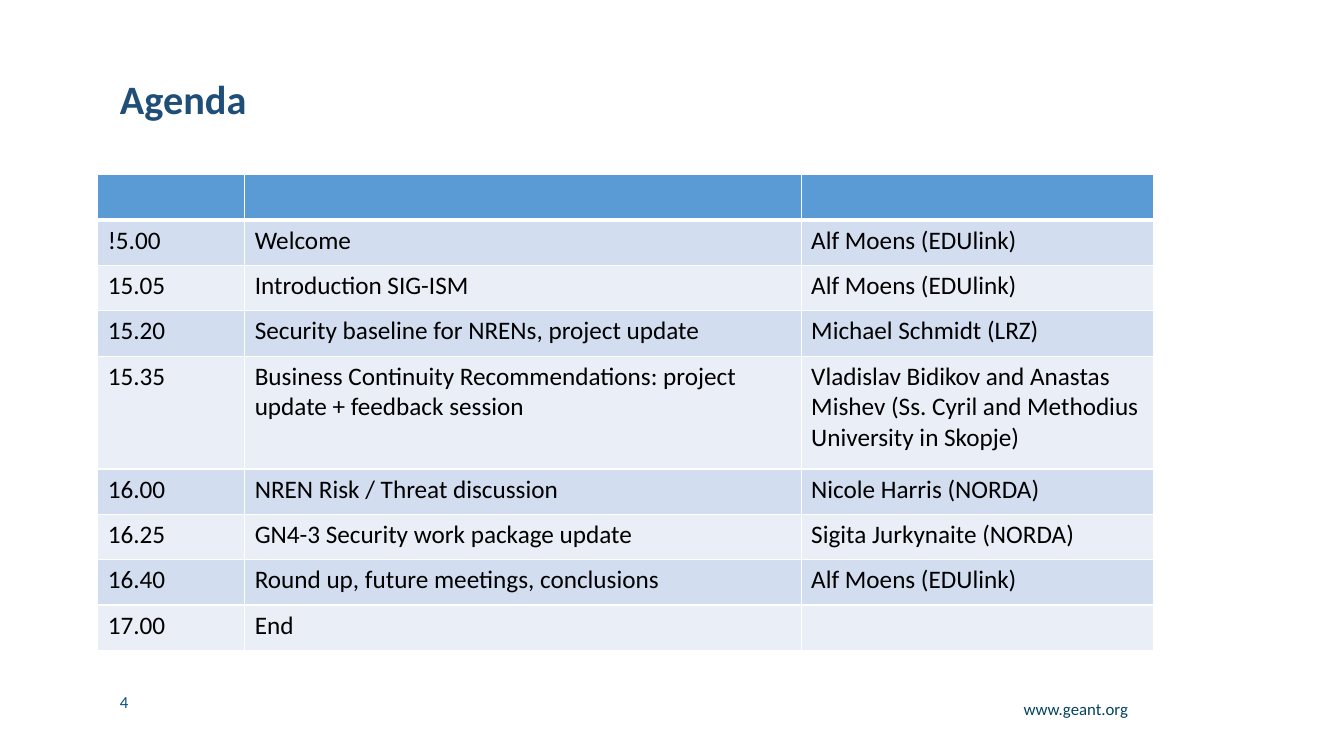
from lxml.etree import SubElement
from pptx import Presentation
from pptx.dml.color import RGBColor
from pptx.enum.text import MSO_ANCHOR as Anchor, MSO_AUTO_SIZE as AutoSize, PP_ALIGN as Align
from pptx.oxml.ns import qn
from pptx.util import Pt

TITLE = "Agenda"
PAGE_NUMBER = "4"
WEBSITE = "www.geant.org"
AGENDA = [
    ("", "", ""),
    ("!5.00", "Welcome", "Alf Moens (EDUlink)"),
    ("15.05", "Introduction SIG-ISM", "Alf Moens (EDUlink)"),
    ("15.20", "Security baseline for NRENs, project update", "Michael Schmidt (LRZ)"),
    ("15.35", "Business Continuity Recommendations: project update + feedback session",
     "Vladislav Bidikov and Anastas Mishev (Ss. Cyril and Methodius University in Skopje)"),
    ("16.00", "NREN Risk / Threat discussion", "Nicole Harris (NORDA)"),
    ("16.25", "GN4-3 Security work package update", "Sigita Jurkynaite (NORDA)"),
    ("16.40", "Round up, future meetings, conclusions", "Alf Moens (EDUlink)"),
    ("17.00", "End", ""),
]
COLOURS = {
    "title": "1F4E79", "number": "065081", "website": "03435F", "text": "000000",
    "header": "5B9BD5", "odd": "D2DEEF", "even": "EAEFF7", "border": "FFFFFF",
}
FONT = "Calibri"
COLUMN_WIDTHS = (105, 397.5, 251.5)
ROW_HEIGHT, TALL_ROW_HEIGHT, TALL_ROW = 32.4, 80.6, 4
TABLE_LEFT, TABLE_TOP = 69.8, 124.8


def colour(name):
    return RGBColor.from_string(COLOURS[name])


def write(frame, text, size, colour_name, bold=False, **paragraph_format):
    frame.word_wrap = True
    paragraph = frame.paragraphs[0]
    paragraph.text = text
    for name, value in paragraph_format.items():
        setattr(paragraph, name, value)
    font_format = {"name": FONT, "size": Pt(size), "bold": bold}
    for name, value in font_format.items():
        setattr(paragraph.font, name, value)
    paragraph.font.color.rgb = colour(colour_name)


def add_borders(cell, bottom_width=1, top_width=1):
    properties = cell._tc.get_or_add_tcPr()
    widths = {"a:lnL": 1, "a:lnR": 1, "a:lnT": top_width, "a:lnB": bottom_width}
    for position, (tag, width) in enumerate(widths.items()):
        line = SubElement(properties, qn(tag), w=str(Pt(width)))
        fill = SubElement(line, qn("a:solidFill"))
        SubElement(fill, qn("a:srgbClr"), val=COLOURS["border"])
        properties.insert(position, line)


def add_agenda(slide):
    heights = [TALL_ROW_HEIGHT if i == TALL_ROW else ROW_HEIGHT for i in range(len(AGENDA))]
    table = slide.shapes.add_table(
        len(AGENDA), len(COLUMN_WIDTHS), Pt(TABLE_LEFT), Pt(TABLE_TOP),
        Pt(sum(COLUMN_WIDTHS)), Pt(sum(heights))).table
    for column, width in zip(table.columns, COLUMN_WIDTHS):
        column.width = Pt(width)
    for index, (row, height, texts) in enumerate(zip(table.rows, heights, AGENDA)):
        row.height = Pt(height)
        band = "header" if index == 0 else ("even", "odd")[index % 2]
        for cell, text in zip(row.cells, texts):
            write(cell.text_frame, text, 18, "text")
            cell.fill.solid()
            cell.fill.fore_color.rgb = colour(band)
            add_borders(cell, 3 if index == 0 else 1, 3 if index == 1 else 1)


def main():
    presentation = Presentation()
    presentation.slide_width, presentation.slide_height = Pt(960), Pt(540)
    slide = presentation.slides.add_slide(presentation.slide_layouts[5])

    title = slide.shapes.title
    title.left, title.top, title.width, title.height = Pt(78.5), Pt(55.4), Pt(779), Pt(33.8)
    title.text_frame.auto_size = AutoSize.NONE
    title.text_frame.vertical_anchor = Anchor.MIDDLE
    write(title.text_frame, TITLE, 28.8, "title", True, alignment=Align.LEFT, line_spacing=0.9)

    add_agenda(slide)

    number = slide.shapes.add_textbox(Pt(78.5), Pt(490.3), Pt(104.4), Pt(21.6))
    write(number.text_frame, PAGE_NUMBER, 12, "number")
    website = slide.shapes.add_textbox(Pt(691.9), Pt(497.5), Pt(121), Pt(26.6))
    write(website.text_frame, WEBSITE, 12, "website", alignment=Align.RIGHT, line_spacing=0.9)

    presentation.save("out.pptx")


if __name__ == "__main__":
    main()
